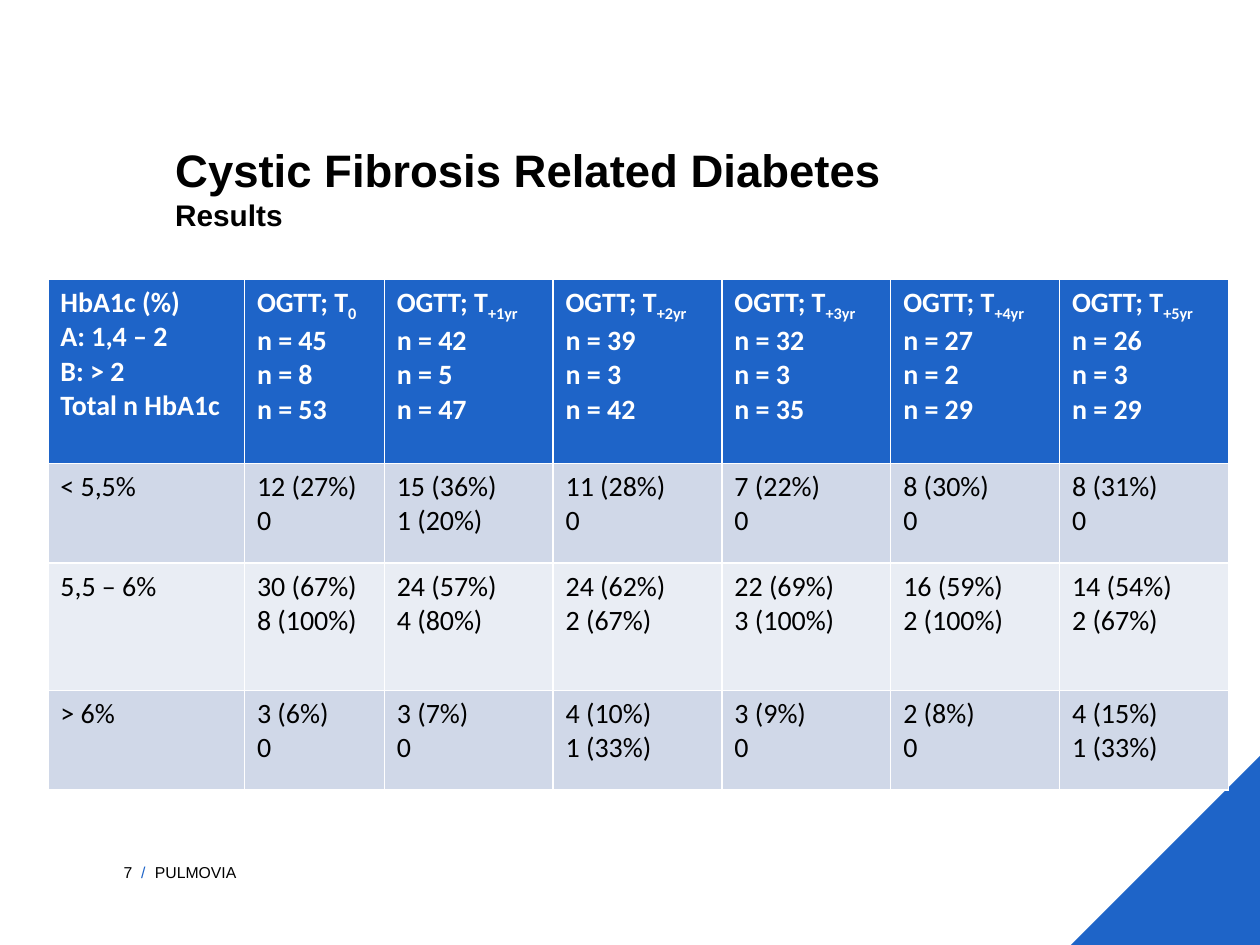
"""Build the slide of HbA1c results for diabetes in cystic fibrosis."""
from pptx import Presentation
from pptx.dml.color import RGBColor
from pptx.enum.shapes import MSO_SHAPE
from pptx.enum.text import MSO_ANCHOR, PP_ALIGN
from pptx.util import Inches, Pt

theme = {
    "blue": RGBColor.from_string("1E64C8"),
    "black": RGBColor.from_string("000000"),
    "white": RGBColor.from_string("FFFFFF"),
    "bands": [RGBColor.from_string(c) for c in ("D0D8E8", "E9EDF4")],
    "title": {"name": "Arial", "size": Pt(26), "bold": True},
    "sub": {"name": "Arial", "size": Pt(17), "bold": True},
    "foot": {"name": "Arial", "size": Pt(9), "bold": False},
    "head": {"name": "Calibri", "size": Pt(16), "bold": True},
    "body": {"name": "Calibri", "size": Pt(16), "bold": False},
}


def write(para, text, look, color):
    run = para.add_run()
    run.text = text
    for key, val in theme[look].items():
        setattr(run.font, key, val)
    run.font.color.rgb = theme[color]
    return run


def place(shape, box, anchor, align=PP_ALIGN.LEFT):
    for key, val in zip(("left", "top", "width", "height"), box):
        setattr(shape, key, Inches(val))
    frame = shape.text_frame
    form = {"margin_left": 0, "margin_right": 0, "margin_top": 0,
            "margin_bottom": 0, "word_wrap": True, "vertical_anchor": anchor}
    for key, val in form.items():
        setattr(frame, key, val)
    para = frame.paragraphs[0]
    para.alignment = align
    return para


deck = Presentation()
deck.slide_width, deck.slide_height = Inches(10), Inches(7.5)
slide = deck.slides.add_slide(deck.slide_layouts[5])
shapes = slide.shapes

corner = shapes.add_shape(MSO_SHAPE.RIGHT_TRIANGLE, Inches(8.5), Inches(6),
                          Inches(1.5), Inches(1.5))
corner.shadow.inherit = False
corner.fill.solid()
corner.fill.fore_color.rgb = theme["blue"]
corner.line.fill.background()
corner._element.spPr.xfrm.set("flipH", "1")

title = place(shapes.title, (1.39, 0.68, 6.6, 0.89), MSO_ANCHOR.BOTTOM)
title.line_spacing = 0.9
write(title, "Cystic Fibrosis Related Diabetes", "title", "black")

sub = place(shapes.add_textbox(0, 0, 0, 0), (1.39, 1.59, 6.6, 0.64), MSO_ANCHOR.TOP)
sub.line_spacing = 0.9
write(sub, "Results", "sub", "black")

name = place(shapes.add_textbox(0, 0, 0, 0), (1.23, 6.85, 4.57, 0.15), MSO_ANCHOR.MIDDLE)
write(name, "PULMOVIA", "foot", "black")

page = place(shapes.add_textbox(0, 0, 0, 0), (0.22, 6.85, 0.97, 0.15),
             MSO_ANCHOR.MIDDLE, PP_ALIGN.RIGHT)
write(page, "7  ", "foot", "black")
write(page, "/ ", "foot", "blue")

counts = [("0", 45, 8, 53), ("+1yr", 42, 5, 47), ("+2yr", 39, 3, 42),
          ("+3yr", 32, 3, 35), ("+4yr", 27, 2, 29), ("+5yr", 26, 3, 29)]
head = ["HbA1c (%)\nA: 1,4 – 2\nB: > 2\nTotal n HbA1c"]
for time, *sums in counts:
    head.append("\n".join([f"OGTT; T|{time}"] + [f"n = {n}" for n in sums]))
rows = [
    head,
    ["< 5,5%", "12 (27%)\n0", "15 (36%)\n1 (20%)", "11 (28%)\n0",
     "7 (22%)\n0", "8 (30%)\n0", "8 (31%)\n0"],
    ["5,5 – 6%", "30 (67%)\n8 (100%)", "24 (57%)\n4 (80%)", "24 (62%)\n2 (67%)",
     "22 (69%)\n3 (100%)", "16 (59%)\n2 (100%)", "14 (54%)\n2 (67%)"],
    ["> 6%", "3 (6%)\n0", "3 (7%)\n0", "4 (10%)\n1 (33%)",
     "3 (9%)\n0", "2 (8%)\n0", "4 (15%)\n1 (33%)"],
]
wide = [1.56, 1.11] + [1.34] * 5
high = [1.46, 0.79, 1.01, 0.79]
table = shapes.add_table(len(rows), len(wide), Inches(0.38), Inches(2.22),
                         Inches(sum(wide)), Inches(sum(high))).table
for col, width in zip(table.columns, wide):
    col.width = Inches(width)
for row, height in zip(table.rows, high):
    row.height = Inches(height)

for r, row in enumerate(rows):
    look, color = ("body", "black") if r else ("head", "white")
    for c, text in enumerate(row):
        cell = table.cell(r, c)
        cell.fill.solid()
        cell.fill.fore_color.rgb = theme["bands"][(r - 1) % 2] if r else theme["blue"]
        frame = cell.text_frame
        for i, line in enumerate(text.split("\n")):
            para = frame.add_paragraph() if i else frame.paragraphs[0]
            main, _, low = line.partition("|")
            write(para, main, look, color)
            if low:
                small = write(para, low, look, color)
                small._r.get_or_add_rPr().set("baseline", "-25000")

deck.save("out.pptx")
